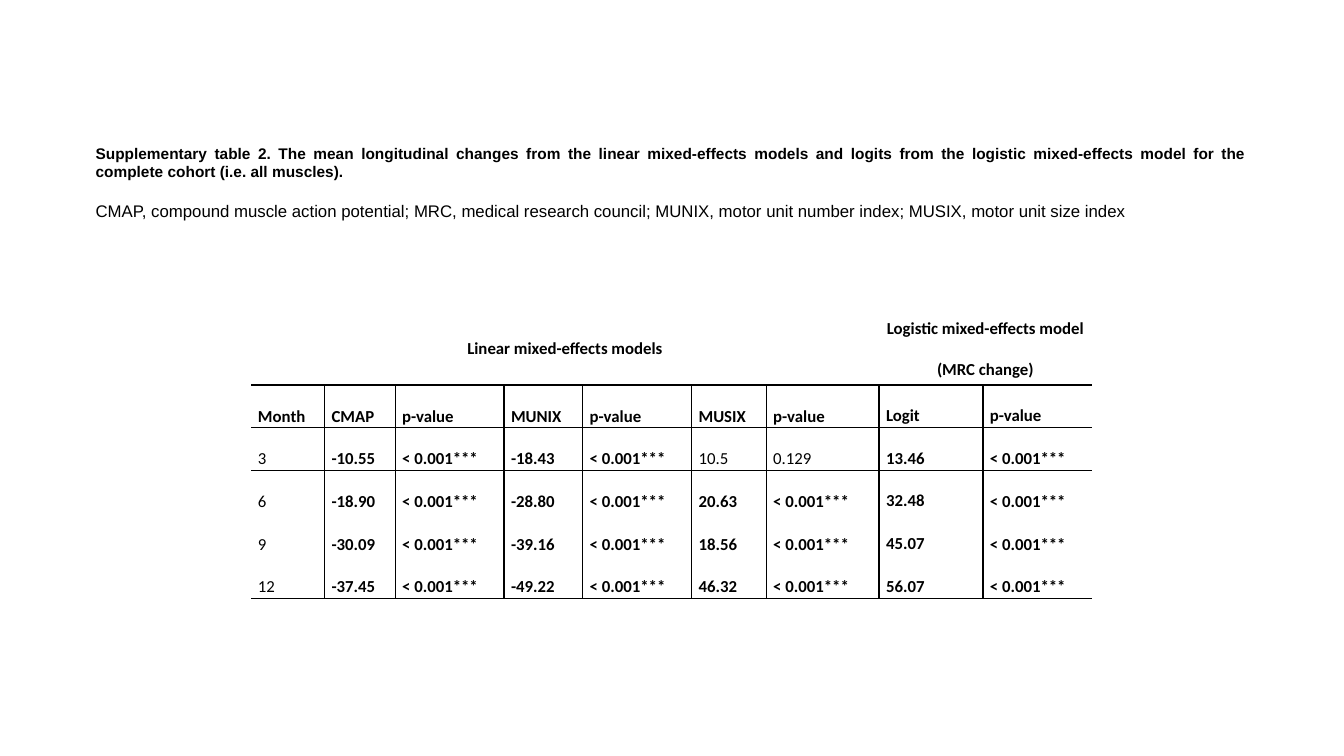
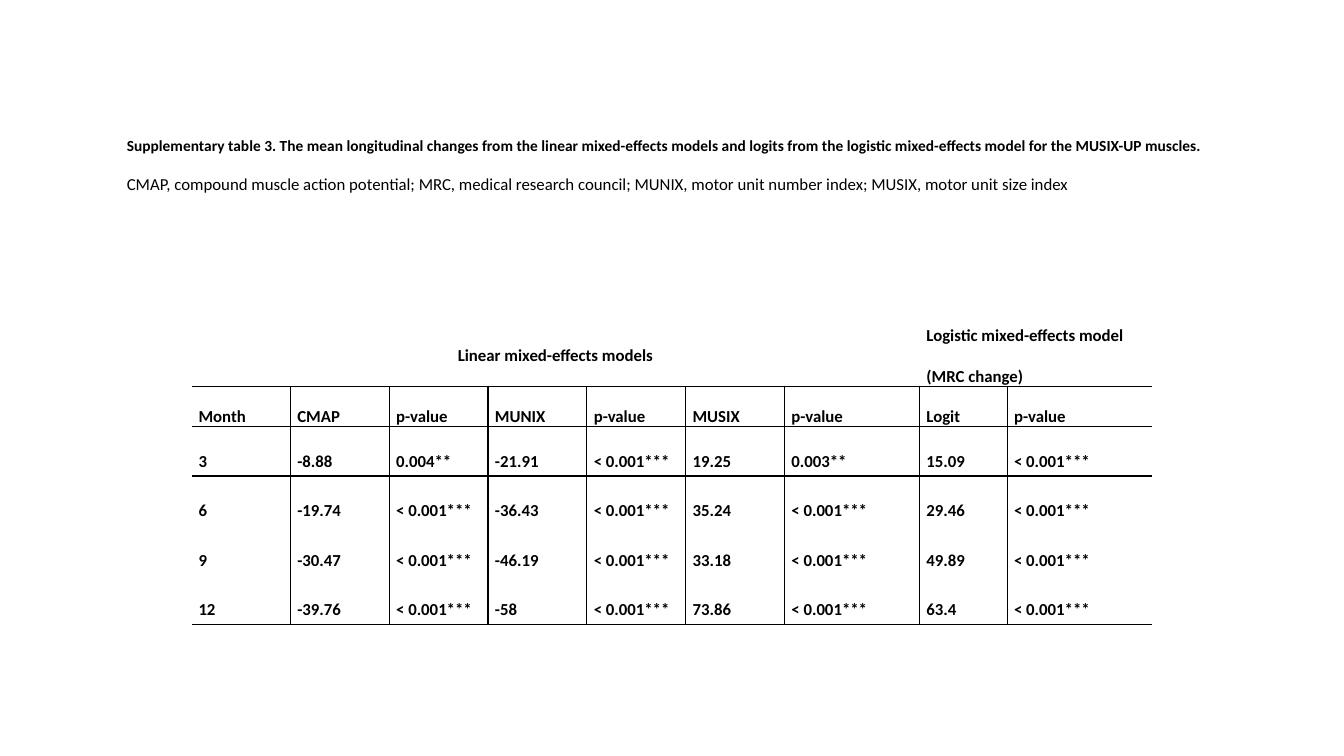
import pptx
import pptx.dml.color
import pptx.enum.text
import pptx.oxml
import pptx.oxml.ns
import pptx.util

Pt = pptx.util.Pt
ALIGN = pptx.enum.text.PP_ALIGN
ANCHOR = pptx.enum.text.MSO_ANCHOR

BLACK = "000000"
TABLE_FONT = "Calibri"
NO_GRID_STYLE = "{2D5ABB26-0587-4C30-8999-92F81FD0307C}"
GROUP_STARTS = (1, 3, 5, 7)
LOGISTIC_COLUMN = 7

ABBREVIATIONS = (
    "CMAP, compound muscle action potential; MRC, medical research council; "
    "MUNIX, motor unit number index; MUSIX, motor unit size index"
)
LINEAR_HEADING = "Linear mixed-effects models"
LOGISTIC_HEADING = "Logistic mixed-effects model (MRC change)"
COLUMN_HEADINGS = ["Month", "CMAP", "p-value", "MUNIX", "p-value",
                   "MUSIX", "p-value", "Logit", "p-value"]
P = "< 0.001***"

SLIDES = [
    {
        "title": "Supplementary table 2. The mean longitudinal changes from the "
                 "linear mixed-effects models and logits from the logistic "
                 "mixed-effects model for the complete cohort (i.e. all muscles).",
        "font": "Arial",
        "caption_box": (61.2, 98.6, 836.6, 63.4),
        "table_at": (179.3, 208.8),
        "widths": [52.6, 50.4, 77.8, 56.2, 77.8, 53.3, 80.6, 74.2, 77.8],
        "heights": [66.2] + [30.5] * 5,
        "logistic_align": ALIGN.CENTER,
        "logit_anchor": ANCHOR.TOP,
        "bold_months": False,
        "rows": [
            ["3", "-10.55", P, "-18.43", P, "10.5", "0.129", "13.46", P],
            ["6", "-18.90", P, "-28.80", P, "20.63", P, "32.48", P],
            ["9", "-30.09", P, "-39.16", P, "18.56", P, "45.07", P],
            ["12", "-37.45", P, "-49.22", P, "46.32", P, "56.07", P],
        ],
    },
    {
        "title": "Supplementary table 3. The mean longitudinal changes from the "
                 "linear mixed-effects models and logits from the logistic "
                 "mixed-effects model for the MUSIX-UP muscles.",
        "font": "Calibri",
        "caption_box": (83.5, 92.9, 793.4, 49.7),
        "table_at": (136.8, 218.2),
        "widths": [70.6] * 6 + [96.5, 62.6, 103.7],
        "heights": [44.6, 20.9] + [35.3] * 4,
        "logistic_align": ALIGN.LEFT,
        "logit_anchor": ANCHOR.MIDDLE,
        "bold_months": True,
        "rows": [
            ["3", "-8.88", "0.004**", "-21.91", P, "19.25", "0.003**", "15.09", P],
            ["6", "-19.74", P, "-36.43", P, "35.24", P, "29.46", P],
            ["9", "-30.47", P, "-46.19", P, "33.18", P, "49.89", P],
            ["12", "-39.76", P, "-58", P, "73.86", P, "63.4", P],
        ],
    },
]


def rgb(value):
    return pptx.dml.color.RGBColor.from_string(value)


def add_run(p, text, font, size, bold):
    r = p.add_run()
    r.text = text
    r.font.name = font
    r.font.size = Pt(size)
    r.font.bold = bold
    r.font.color.rgb = rgb(BLACK)


def add_caption(slide, spec_):
    box = slide.shapes.add_textbox(*map(Pt, spec_["caption_box"]))
    tf = box.text_frame
    tf.word_wrap = True
    tf.auto_size = pptx.enum.text.MSO_AUTO_SIZE.SHAPE_TO_FIT_TEXT
    tf.vertical_anchor = ANCHOR.MIDDLE
    title, note = tf.paragraphs[0], tf.add_paragraph()
    title.alignment = note.alignment = ALIGN.JUSTIFY
    note.space_before = Pt(14)
    add_run(title, spec_["title"], spec_["font"], 11, True)
    add_run(note, ABBREVIATIONS, spec_["font"], 12, False)


def set_borders(cell, sides):
    """Draw 1 pt lines on the given sides, a string of L, R, T and B in that order."""
    tc_pr = cell._tc.get_or_add_tcPr()
    for i, side in enumerate(sides):
        tc_pr.insert(i, pptx.oxml.parse_xml(
            f'<a:ln{side} {pptx.oxml.ns.nsdecls("a")} w="{Pt(1)}"><a:solidFill>'
            f'<a:srgbClr val="{BLACK}"/></a:solidFill></a:ln{side}>'))


def border_sides(row, column, last_row):
    ruled = (0, 1, last_row)
    tests = [
        ("L", row > 0 and column in GROUP_STARTS),
        ("R", row > 0 and column + 1 in GROUP_STARTS),
        ("T", row - 1 in ruled),
        ("B", row in ruled),
    ]
    return "".join(side for side, drawn in tests if drawn)


def fill_cell(cell, text, bold=True, align=ALIGN.LEFT, anchor=ANCHOR.MIDDLE):
    cell.vertical_anchor = anchor
    p = cell.text_frame.paragraphs[0]
    p.alignment = align
    p.line_spacing = 2.0
    add_run(p, text, TABLE_FONT, 12, bold)


def is_bold(row, column, bold_months):
    """Months follow the slide; a value and its p-value are bold when significant."""
    if column == 0:
        return bold_months
    p_column = column + 1 if column in GROUP_STARTS else column
    return "*" in row[p_column]


def add_results_table(slide, spec_):
    widths, heights = spec_["widths"], spec_["heights"]
    frame = slide.shapes.add_table(
        len(heights), len(widths), *map(Pt, spec_["table_at"]),
        Pt(sum(widths)), Pt(sum(heights)))
    table = frame.table
    table.first_row = table.horz_banding = False
    table._tbl.tblPr.find(pptx.oxml.ns.qn("a:tableStyleId")).text = NO_GRID_STYLE
    for column, width in zip(table.columns, widths):
        column.width = Pt(width)
    for row, height in zip(table.rows, heights):
        row.height = Pt(height)

    for r in range(len(heights)):
        for c in range(len(widths)):
            cell = table.cell(r, c)
            cell.margin_left = cell.margin_right = Pt(5)
            cell.margin_top = cell.margin_bottom = 0
            cell.fill.background()
            set_borders(cell, border_sides(r, c, len(heights) - 1))

    linear, logistic = table.cell(0, 0), table.cell(0, LOGISTIC_COLUMN)
    linear.merge(table.cell(0, LOGISTIC_COLUMN - 1))
    logistic.merge(table.cell(0, len(widths) - 1))
    fill_cell(linear, LINEAR_HEADING, align=ALIGN.CENTER)
    fill_cell(logistic, LOGISTIC_HEADING, align=spec_["logistic_align"])

    for c, heading in enumerate(COLUMN_HEADINGS):
        anchor = spec_["logit_anchor"] if c >= LOGISTIC_COLUMN else ANCHOR.MIDDLE
        fill_cell(table.cell(1, c), heading, anchor=anchor)
    for r, row in enumerate(spec_["rows"], start=2):
        for c, text in enumerate(row):
            anchor = spec_["logit_anchor"] if c == LOGISTIC_COLUMN else ANCHOR.MIDDLE
            fill_cell(table.cell(r, c), text,
                      bold=is_bold(row, c, spec_["bold_months"]), anchor=anchor)


def main():
    prs = pptx.Presentation()
    prs.slide_width, prs.slide_height = Pt(960), Pt(540)
    for content in SLIDES:
        slide = prs.slides.add_slide(prs.slide_layouts[6])
        add_results_table(slide, content)
        add_caption(slide, content)
    prs.save("out.pptx")


if __name__ == "__main__":
    main()
